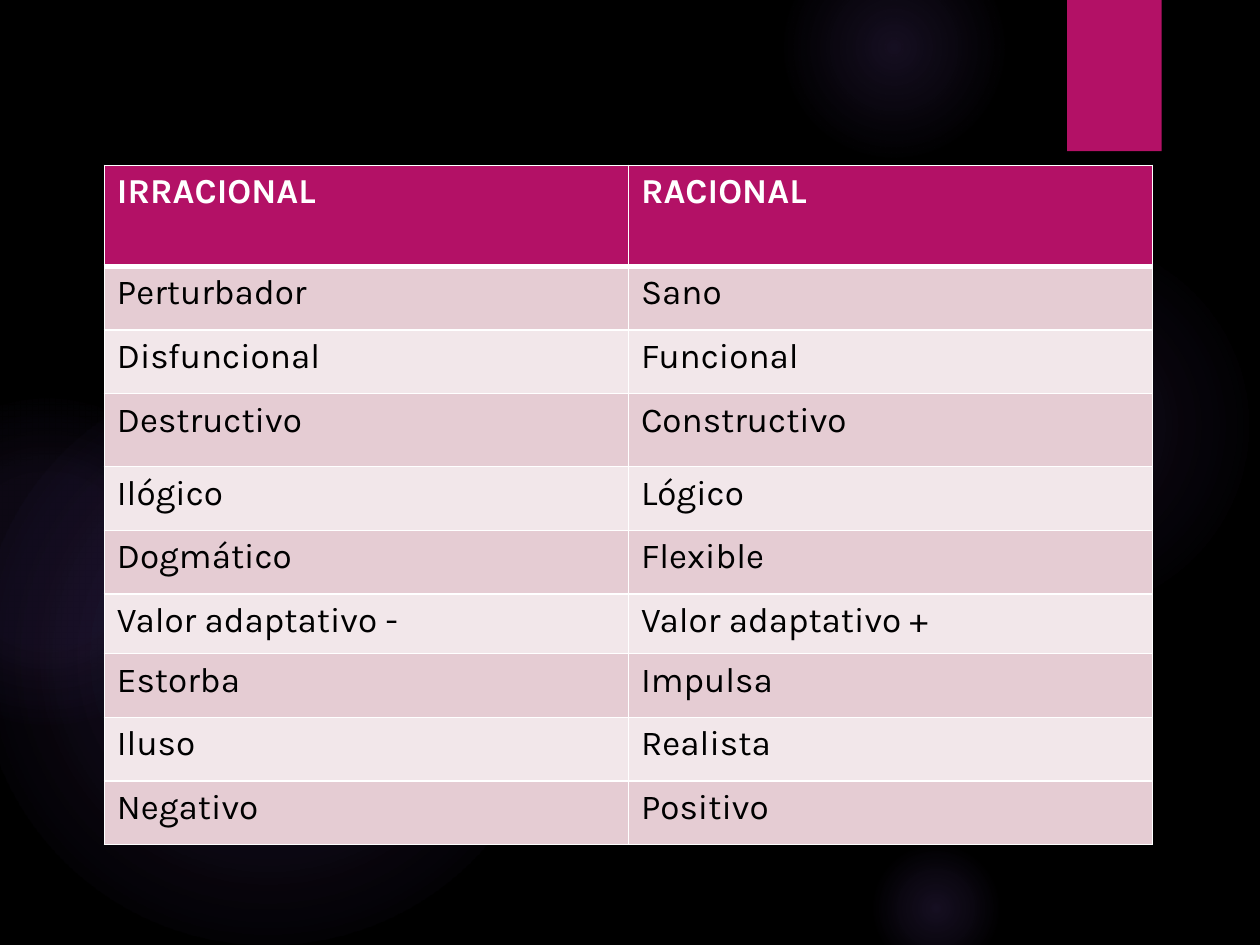
import pptx
import pptx.dml.color
import pptx.enum.shapes
import pptx.oxml
import pptx.oxml.ns
import pptx.util

Pt = pptx.util.Pt
SHAPES = pptx.enum.shapes.MSO_SHAPE
NAMESPACE = pptx.oxml.ns.nsdecls("a")
MAGENTA, ROSE, PALE, WHITE, BLACK, VIOLET = (
    "B31166", "E5CCD3", "F2E7EA", "FFFFFF", "000000", "9B6BF2")

# left, top, diameter, then (position, opacity) stops in percent
GLOWS = [
    (496, 132, 222, [(0, 7), (36, 6), (69, 0)]),
    (448, -36, 126, [(0, 14), (36, 7), (73, 0)]),
    (496, 480, 78, [(0, 14), (36, 7), (66, 0)]),
    (-12, 210, 330, [(0, 11), (36, 10), (75, 0)]),
    (-66, 228, 186, [(0, 8), (36, 8), (72, 0)]),
]
ROWS = [
    ("IRRACIONAL", "RACIONAL"),
    ("Perturbador", "Sano"),
    ("Disfuncional", "Funcional"),
    ("Destructivo", "Constructivo"),
    ("Ilógico", "Lógico"),
    ("Dogmático", "Flexible"),
    ("Valor adaptativo -", "Valor adaptativo +"),
    ("Estorba", "Impulsa"),
    ("Iluso", "Realista"),
    ("Negativo", "Positivo"),
]
ROW_HEIGHT = 36.4
SPECIAL_HEIGHTS = {0: 57.6, 3: 41.8, 6: 34}


def paint(fill, color):
    fill.solid()
    fill.fore_color.rgb = pptx.dml.color.RGBColor.from_string(color)


def add_plain_shape(page, kind, box, color):
    shape = page.shapes.add_shape(kind, *(Pt(length) for length in box))
    shape.shadow.inherit = False
    shape.line.fill.background()
    paint(shape.fill, color)
    return shape


def add_glow(page, box, stops):
    """Circle whose colour fades out from its centre."""
    glow = add_plain_shape(page, SHAPES.OVAL, box, VIOLET)
    stop_xml = "".join(
        f'<a:gs pos="{position * 1000}"><a:srgbClr val="{VIOLET}">'
        f'<a:alpha val="{opacity * 1000}"/></a:srgbClr></a:gs>'
        for position, opacity in stops)
    gradient = pptx.oxml.parse_xml(
        f'<a:gradFill {NAMESPACE} rotWithShape="1"><a:gsLst>{stop_xml}</a:gsLst>'
        '<a:path path="circle">'
        '<a:fillToRect l="50000" t="50000" r="50000" b="50000"/>'
        '</a:path></a:gradFill>')
    properties = glow._element.spPr
    solid = properties.find(pptx.oxml.ns.qn("a:solidFill"))
    properties.replace(solid, gradient)


def add_ribbon(page, box):
    ribbon = add_plain_shape(page, SHAPES.RECTANGLE, box, MAGENTA)
    effects = ribbon._element.spPr.find(pptx.oxml.ns.qn("a:effectLst"))
    effects.append(pptx.oxml.parse_xml(
        f'<a:outerShdw {NAMESPACE} blurRad="{Pt(3)}" dist="{Pt(2)}" '
        f'dir="5400000" rotWithShape="0"><a:srgbClr val="{BLACK}">'
        '<a:alpha val="45000"/></a:srgbClr></a:outerShdw>'))


def set_borders(cell, widths):
    """Draw white borders; widths are left, right, top, bottom."""
    properties = cell._tc.get_or_add_tcPr()
    for index, (side, width) in enumerate(zip("LRTB", widths)):
        properties.insert(index, pptx.oxml.parse_xml(
            f'<a:ln{side} {NAMESPACE} w="{Pt(width)}"><a:solidFill>'
            f'<a:srgbClr val="{WHITE}"/></a:solidFill></a:ln{side}>'))


def fill_cell(cell, text, row):
    header = row == 0
    paint(cell.fill, MAGENTA if header else ROSE if row % 2 else PALE)
    set_borders(cell, (1, 1, 3 if row == 1 else 1, 3 if header else 1))
    span = cell.text_frame.paragraphs[0].add_run()
    span.text = text
    span.font.name = "Karla"
    span.font.size = Pt(20)
    span.font.bold = header
    paint(span.font.fill, WHITE if header else BLACK)


def add_comparison(page, left, top, width):
    heights = [SPECIAL_HEIGHTS.get(row, ROW_HEIGHT) for row in range(len(ROWS))]
    columns = len(ROWS[0])
    table = page.shapes.add_table(
        len(ROWS), columns, Pt(left), Pt(top), Pt(width), Pt(sum(heights))).table
    table.horz_banding = False
    for column in table.columns:
        column.width = Pt(width / columns)
    for row, (texts, height) in enumerate(zip(ROWS, heights)):
        table.rows[row].height = Pt(height)
        for column, text in enumerate(texts):
            fill_cell(table.cell(row, column), text, row)


def main():
    deck = pptx.Presentation()
    deck.slide_width, deck.slide_height = Pt(720), Pt(540)
    page = deck.slides.add_slide(deck.slide_layouts[6])
    paint(page.background.fill, BLACK)
    for left, top, diameter, stops in GLOWS:
        add_glow(page, (left, top, diameter, diameter), stops)
    add_ribbon(page, (609.8, 0, 54, 86.4))
    add_comparison(page, 59.6, 94.5, 599)
    deck.save("out.pptx")


if __name__ == "__main__":
    main()
